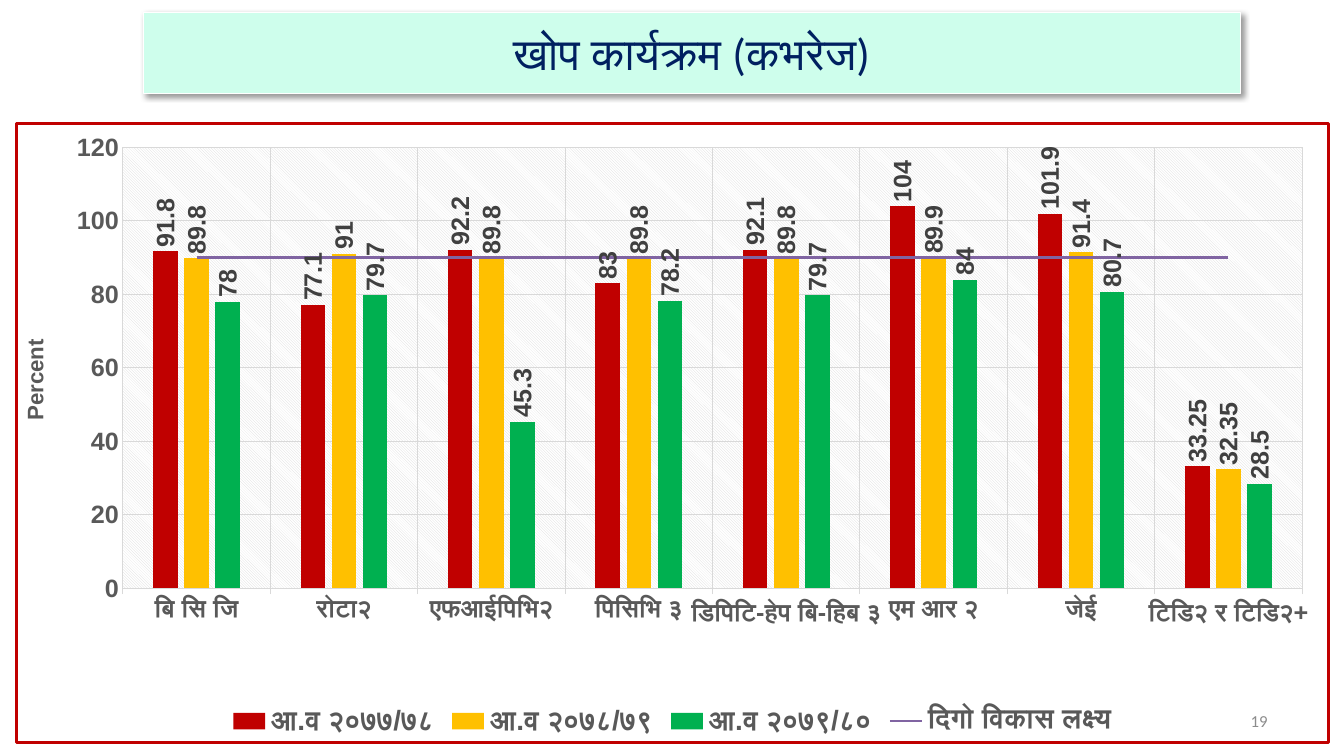
from lxml import etree
from pptx import Presentation, util as u
from pptx.chart.data import CategoryChartData
from pptx.dml.color import RGBColor
from pptx.enum import chart as charts, dml, shapes, text
from pptx.oxml import parse_xml
from pptx.oxml.ns import nsdecls, qn

MINT = RGBColor(0xCE, 0xFE, 0xEC)
NAVY = RGBColor(0x00, 0x20, 0x60)
WHITE = RGBColor(0xFF, 0xFF, 0xFF)
RED = RGBColor(0xC0, 0x00, 0x00)
AMBER = RGBColor(0xFF, 0xC0, 0x00)
GREEN = RGBColor(0x00, 0xB0, 0x50)
PURPLE = RGBColor(0x80, 0x64, 0xA2)
GRID = RGBColor(0xD9, 0xD9, 0xD9)
AXIS_TEXT = RGBColor(0x59, 0x59, 0x59)
LABEL_TEXT = RGBColor(0x40, 0x40, 0x40)
PAGE_GREY = RGBColor(0x8C, 0x8C, 0x8C)

VACCINES = ["बि सि जि", "रोटा२", "एफआईपिभि२", "पिसिभि ३", "डिपिटि-हेप बि-हिब ३",
            "एम आर २", "जेई", "टिडि२ र टिडि२+"]
COVERAGE = [
    ("आ.व २०७७/७८", RED, [91.8, 77.1, 92.2, 83, 92.1, 104, 101.9, 33.25]),
    ("आ.व २०७८/७९", AMBER, [89.8, 91, 89.8, 89.8, 89.8, 89.9, 91.4, 32.35]),
    ("आ.व २०७९/८०", GREEN, [78, 79.7, 45.3, 78.2, 79.7, 84, 80.7, 28.5]),
]
TARGET_NAME, TARGET = "दिगो विकास लक्ष्य", 90

SHADOW = f"""<a:effectLst {nsdecls('a')}>
  <a:outerShdw blurRad="50800" dist="38100" dir="2700000" algn="tl" rotWithShape="0">
    <a:srgbClr val="000000"><a:alpha val="40000"/></a:srgbClr>
  </a:outerShdw></a:effectLst>"""
PLOT_LAYOUT = f"""<c:layout {nsdecls('c')}><c:manualLayout>
  <c:layoutTarget val="inner"/><c:xMode val="edge"/><c:yMode val="edge"/>
  <c:x val="0.081"/><c:y val="0.039"/><c:w val="0.899"/><c:h val="0.712"/>
</c:manualLayout></c:layout>"""
PLOT_FILL = f"""<c:spPr {nsdecls('c', 'a')}><a:pattFill prst="ltDnDiag">
  <a:fgClr><a:srgbClr val="{GRID}"/></a:fgClr><a:bgClr><a:srgbClr val="{WHITE}"/></a:bgClr>
</a:pattFill><a:ln><a:noFill/></a:ln></c:spPr>"""
CHART_FRAME = f"""<c:spPr {nsdecls('c', 'a')}>
  <a:solidFill><a:srgbClr val="{WHITE}"/></a:solidFill>
  <a:ln w="25400"><a:solidFill><a:srgbClr val="{RED}"/></a:solidFill></a:ln></c:spPr>"""
LINE_CHART = f"""<c:lineChart {nsdecls('c')}><c:grouping val="standard"/>
  <c:varyColors val="0"/><c:marker val="1"/></c:lineChart>"""


def set_font(font, size, color, name="Arial", bold=True):
    font.size, font.name, font.bold = u.Pt(size), name, bold
    font.color.rgb = color


def set_line(line, color, width=0.75):
    line.color.rgb = color
    line.width = u.Pt(width)


class CoverageSlide:
    """Places elements by percentages of the slide's width and height."""
    text_font = "Calibri"

    def __init__(self):
        self.deck = Presentation()
        self.deck.slide_width, self.deck.slide_height = u.Inches(13.33), u.Inches(7.5)
        self.slide = self.deck.slides.add_slide(self.deck.slide_layouts[6])

    def area(self, left, top, width, height):
        wide, high = self.deck.slide_width / 100, self.deck.slide_height / 100
        return [int(n) for n in (left * wide, top * high, width * wide, height * high)]

    def add_words(self, holder, words, size, color, align):
        frame = holder.text_frame
        frame.word_wrap = True
        frame.vertical_anchor = text.MSO_ANCHOR.MIDDLE
        paragraph = frame.paragraphs[0]
        paragraph.alignment = align
        run = paragraph.add_run()
        run.text = words
        set_font(run.font, size, color, self.text_font, False)

    def banner(self, words, *share):
        banner = self.slide.shapes.add_shape(shapes.MSO_SHAPE.RECTANGLE, *self.area(*share))
        banner.fill.solid()
        banner.fill.fore_color.rgb = MINT
        set_line(banner.line, WHITE)
        banner.shadow.inherit = False
        flat = banner.element.spPr.find(qn("a:effectLst"))
        flat.getparent().replace(flat, parse_xml(SHADOW))
        self.add_words(banner, words, 32, NAVY, text.PP_ALIGN.CENTER)

    def page_number(self, words, *share):
        number = self.slide.shapes.add_textbox(*self.area(*share))
        self.add_words(number, words, 12, PAGE_GREY, text.PP_ALIGN.RIGHT)

    def coverage_chart(self, *share):
        data = CategoryChartData()
        data.categories = VACCINES
        for name, _, values in COVERAGE:
            data.add_series(name, values)
        data.add_series(TARGET_NAME, [TARGET] * len(VACCINES))
        chart = self.slide.shapes.add_chart(
            charts.XL_CHART_TYPE.COLUMN_CLUSTERED, *self.area(*share), data).chart
        set_font(chart.font, 10, RGBColor(0, 0, 0), self.text_font, False)
        chart.has_title = False
        chart.has_legend = True
        chart.legend.position = charts.XL_LEGEND_POSITION.BOTTOM
        chart.legend.include_in_layout = False
        set_font(chart.legend.font, 20, AXIS_TEXT)

        bars = chart.plots[0]
        bars.gap_width, bars.overlap, bars.vary_by_categories = 247, -27, False
        for series, (_, color, _) in zip(bars.series, COVERAGE):
            self.year_bars(series, color)
        self.axes(chart)
        self.target_line(chart)

        plot_area = chart.element.find(".//" + qn("c:plotArea"))
        plot_area.insert(0, parse_xml(PLOT_LAYOUT))
        plot_area.append(parse_xml(PLOT_FILL))
        chart.element.find(qn("c:chart")).addnext(parse_xml(CHART_FRAME))

    def year_bars(self, series, color):
        series.format.fill.solid()
        series.format.fill.fore_color.rgb = color
        series.invert_if_negative = False
        labels = series.data_labels
        labels.show_value = True
        labels.position = charts.XL_LABEL_POSITION.OUTSIDE_END
        set_font(labels.font, 18, LABEL_TEXT)
        turn = series.format.fill and bars_label_body(series)
        turn.set("rot", "-5400000")
        turn.set("vert", "horz")

    def axes(self, chart):
        vaccines, percent = chart.category_axis, chart.value_axis
        for axis in (vaccines, percent):
            set_font(axis.tick_labels.font, 18, AXIS_TEXT)
            axis.has_major_gridlines = True
            set_line(axis.major_gridlines.format.line, GRID)
        set_line(vaccines.format.line, GRID)
        vaccines.major_tick_mark = charts.XL_TICK_MARK.OUTSIDE
        percent.major_tick_mark = charts.XL_TICK_MARK.NONE
        percent.format.line.fill.background()
        percent.minimum_scale, percent.maximum_scale, percent.major_unit = 0, 120, 20
        run = percent.axis_title.text_frame.paragraphs[0].add_run()
        run.text = "Percent"
        set_font(run.font, 16, AXIS_TEXT)

    def target_line(self, chart):
        """Moves the last series from the bars to a line on the same axes."""
        bars = chart.element.find(".//" + qn("c:barChart"))
        target = bars.findall(qn("c:ser"))[-1]
        line_chart = parse_xml(LINE_CHART)
        bars.addnext(line_chart)
        for inverted in target.findall(qn("c:invertIfNegative")):
            target.remove(inverted)
        line_chart.insert(2, target)
        for axis_id in bars.findall(qn("c:axId")):
            etree.SubElement(line_chart, qn("c:axId")).set("val", axis_id.get("val"))
        series = chart.plots[1].series[0]
        set_line(series.format.line, PURPLE, 1.75)
        series.format.line.dash_style = dml.MSO_LINE.SOLID
        series.marker.style = charts.XL_MARKER_STYLE.NONE
        series.smooth = False


def bars_label_body(series):
    """Returns the body properties that turn the labels of a series."""
    return series.data_labels.font and series._element.find(
        qn("c:dLbls") + "/" + qn("c:txPr") + "/" + qn("a:bodyPr"))


def main():
    page = CoverageSlide()
    page.banner("खोप कार्यक्रम (कभरेज)", 10.65, 1.6, 81.62, 10.8)
    page.coverage_chart(1.13, 16.13, 97.82, 82.27)
    page.page_number("19", 71.72, 92.67, 23.33, 5.33)
    page.deck.save("out.pptx")


if __name__ == "__main__":
    main()
